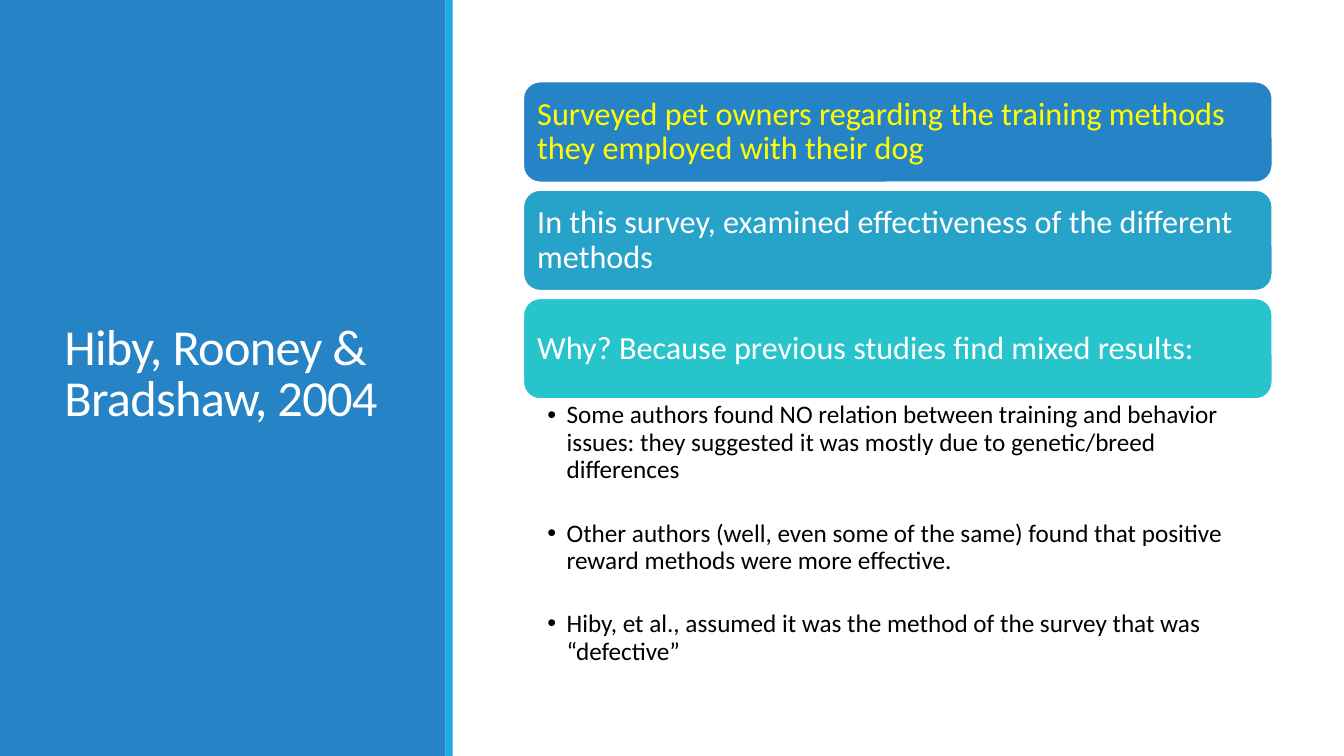
from lxml.etree import SubElement
from pptx import Presentation
from pptx.dml.color import RGBColor
from pptx.enum.shapes import MSO_SHAPE as Shape
from pptx.enum.text import MSO_ANCHOR as Anchor, PP_ALIGN as Align
from pptx.oxml.ns import qn
from pptx.util import Inches, Pt

BLUE = RGBColor(0x26, 0x83, 0xC6)
SKY = RGBColor(0x1C, 0xAD, 0xE4)
OCEAN = RGBColor(0x27, 0xA3, 0xC9)
TEAL = RGBColor(0x28, 0xC4, 0xCC)
YELLOW = RGBColor(0xFF, 0xFF, 0x00)
WHITE = RGBColor(0xFF, 0xFF, 0xFF)
BLACK = RGBColor(0x00, 0x00, 0x00)

TITLE = "Hiby, Rooney & Bradshaw, 2004"
CARDS = [
    ("Surveyed pet owners regarding the training methods they employed with their dog", BLUE, YELLOW),
    ("In this survey, examined effectiveness of the different methods", OCEAN, WHITE),
    ("Why? Because previous studies find mixed results:", TEAL, WHITE),
]
POINTS = [
    "Some authors found NO relation between training and behavior issues: "
    "they suggested it was mostly due to genetic/breed differences",
    "Other authors (well, even some of the same) found that positive reward methods were more effective.",
    "Hiby, et al., assumed it was the method of the survey that was “defective”",
]


def write(shape, *lines, size, color, leading=0.9, after=0, insets=(0.1, 0.05, 0.1, 0.05),
          anchor=Anchor.MIDDLE, bullet=False, track=None):
    """Fill a shape with one paragraph per line; insets run left, top, right, bottom."""
    frame = shape.text_frame
    frame.word_wrap = True
    frame.vertical_anchor = anchor
    (frame.margin_left, frame.margin_top,
     frame.margin_right, frame.margin_bottom) = map(Inches, insets)
    for i, line in enumerate(lines):
        para = frame.paragraphs[0] if i == 0 else frame.add_paragraph()
        para.alignment = Align.LEFT
        para.line_spacing = leading
        para.space_after = Pt(after)
        run = para.add_run()
        run.text = line
        run.font.name = "Calibri"
        run.font.size = Pt(size)
        run.font.color.rgb = color
        if track is not None:
            run.font._element.set("spc", str(round(track * 100)))
        if bullet:
            props = para._p.get_or_add_pPr()
            props.set("marL", str(Inches(0.19)))
            props.set("indent", str(-Inches(0.19)))
            SubElement(props, qn("a:buFont"), typeface="Arial")
            SubElement(props, qn("a:buChar"), char="•")


def block(slide, kind, fill, left, top, width, height):
    shape = slide.shapes.add_shape(kind, *map(Inches, (left, top, width, height)))
    shape.shadow.inherit = False
    shape.fill.solid()
    shape.fill.fore_color.rgb = fill
    shape.line.fill.background()
    return shape


def panel(slide, left, top, width, height):
    """Title panel with a bright strip along its right edge."""
    strip = 0.07
    block(slide, Shape.RECTANGLE, BLUE, left, top, width - strip, height)
    title = slide.shapes.add_textbox(*map(Inches, (left + 0.54, top + 0.57, 3.37, 6.31)))
    write(title, TITLE, size=36, color=WHITE, leading=0.85, track=-0.5)
    block(slide, Shape.RECTANGLE, SKY, left + width - strip, top, strip, height)


def cards(slide, left, top, width, height, pitch):
    for i, (text, fill, color) in enumerate(CARDS):
        card = block(slide, Shape.ROUNDED_RECTANGLE, fill, left, top + i * pitch, width, height)
        card.line.color.rgb = WHITE
        card.line.width = Pt(1.25)
        write(card, text, size=23, color=color, insets=(0.09,) * 4)


def points(slide, left, top, width, height):
    box = slide.shapes.add_textbox(*map(Inches, (left, top, width, height)))
    write(box, *POINTS, size=18, color=BLACK, after=26, bullet=True,
          insets=(0.24, 0.03, 0.18, 0.03), anchor=Anchor.TOP)


def main():
    deck = Presentation()
    deck.slide_width, deck.slide_height = Inches(13.33), Inches(7.5)
    slide = deck.slides.add_slide(deck.slide_layouts[6])
    panel(slide, 0, 0, 4.49, 7.5)
    cards(slide, 5.19, 0.81, 7.43, 1, 1.075)
    points(slide, 5.19, 3.96, 7.43, 2.81)
    deck.save("out.pptx")


if __name__ == "__main__":
    main()
